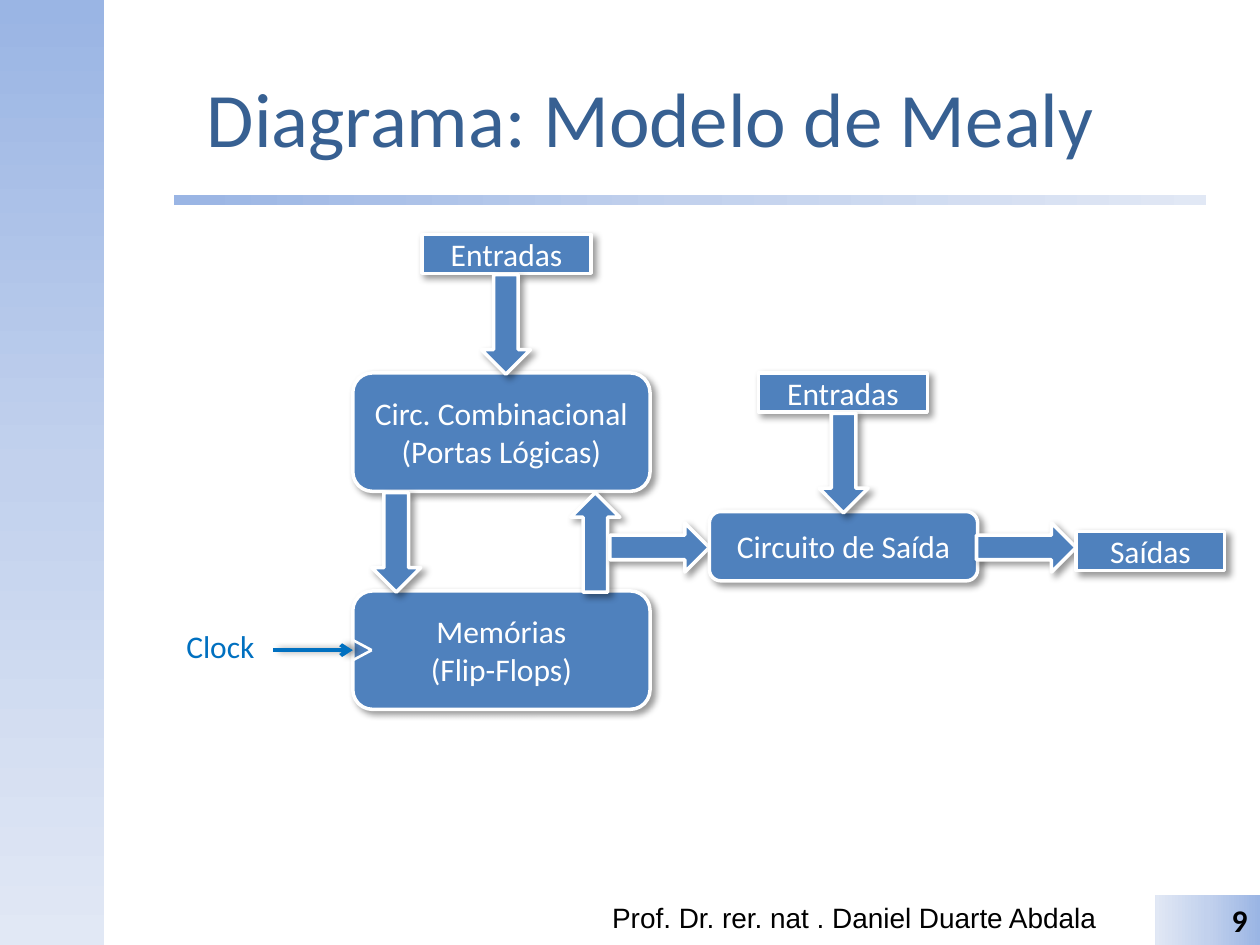
"""Builds the slide with the block diagram of the Mealy model."""
import copy

import pptx
import pptx.dml.color
import pptx.enum.shapes
import pptx.enum.text
import pptx.oxml
import pptx.oxml.ns
import pptx.util
from pptx.util import Inches

COLORS = {
    "title": "376092", "block": "4F81BD", "white": "FFFFFF", "black": "000000",
    "clock": "0070C0", "deep": "9AB5E4", "mid": "C2D1ED", "pale": "E1E8F5",
}
RGB = {name: pptx.dml.color.RGBColor.from_string(value) for name, value in COLORS.items()}
FORM = pptx.enum.shapes.MSO_SHAPE
ALIGN = pptx.enum.text.PP_ALIGN
ANCHOR = pptx.enum.text.MSO_ANCHOR
STRAIGHT = pptx.enum.shapes.MSO_CONNECTOR.STRAIGHT


def write(shape, lines, size, color, align=ALIGN.CENTER, anchor=ANCHOR.MIDDLE,
          font="Calibri", bold=False, wrap=True):
    frame = shape.text_frame
    frame.word_wrap = wrap
    frame.vertical_anchor = anchor
    for index, line in enumerate(lines):
        paragraph = frame.add_paragraph() if index else frame.paragraphs[0]
        paragraph.alignment = align
        run = paragraph.add_run()
        run.text = line
        run.font.name = font
        run.font.size = pptx.util.Pt(size)
        run.font.bold = bold
        run.font.color.rgb = RGB[color]


def add_effects(shape, angle=None):
    properties = shape._element.spPr
    effects = properties.find(pptx.oxml.ns.qn("a:effectLst"))
    if effects is None:
        effects = pptx.oxml.parse_xml(f'<a:effectLst {pptx.oxml.ns.nsdecls("a")}/>')
        properties.append(effects)
    if angle is not None:
        effects.append(pptx.oxml.parse_xml(
            f'<a:outerShdw {pptx.oxml.ns.nsdecls("a")} blurRad="50800" dist="38100" '
            f'dir="{angle * 60000}" algn="tl" rotWithShape="0">'
            f'<a:srgbClr val="{COLORS["black"]}"><a:alpha val="40000"/></a:srgbClr>'
            '</a:outerShdw>'))


presentation = pptx.Presentation()
presentation.slide_width = Inches(10)
presentation.slide_height = Inches(7.5)
slide = presentation.slides.add_slide(presentation.slide_layouts[6])
shapes = slide.shapes

bands = []
for form, box, angle in [
    (FORM.RECTANGLE, (0, 0, 0.83, 7.5), 270),
    (FORM.RECTANGLE, (1.38, 1.55, 8.19, 0.08), 0),
    (FORM.RECTANGLE, (9.17, 7.1, 0.83, 0.4), 180),
]:
    band = shapes.add_shape(form, *map(Inches, box))
    band.shadow.inherit = False
    band.line.fill.background()
    band.fill.gradient()
    band.fill.gradient_angle = angle
    stop_list = band._element.spPr.find(".//" + pptx.oxml.ns.qn("a:gsLst"))
    stop_list.insert(1, copy.deepcopy(stop_list[0]))
    for stop, color, position in zip(band.fill.gradient_stops, ("deep", "mid", "pale"), (0, 0.5, 1)):
        stop.color.rgb = RGB[color]
        stop.position = position
    bands.append(band)
write(bands[-1], ["9"], 18, "black", ALIGN.RIGHT, ANCHOR.TOP, bold=True)

title = shapes.add_textbox(Inches(0.83), Inches(0.3), Inches(8.67), Inches(1.25))
write(title, ["Diagrama: Modelo de Mealy"], 44, "title")
author = shapes.add_textbox(Inches(4.76), Inches(7.1), Inches(4.19), Inches(0.4))
write(author, ["Prof. Dr. rer. nat . Daniel Duarte Abdala"], 16, "black", ALIGN.LEFT, ANCHOR.TOP, "Arial")

blocks = {}
for name, form, box, lines in [
    ("logic", FORM.ROUNDED_RECTANGLE, (2.8, 2.96, 2.36, 0.94), ["Circ. Combinacional", "(Portas Lógicas)"]),
    ("memory", FORM.ROUNDED_RECTANGLE, (2.8, 4.69, 2.36, 0.94), ["Memórias", "(Flip-Flops)"]),
    ("logic to memory", FORM.DOWN_ARROW, (2.95, 3.91, 0.39, 0.79), []),
    ("logic inputs", FORM.RECTANGLE, (3.35, 1.86, 1.34, 0.31), ["Entradas"]),
    ("inputs to logic", FORM.DOWN_ARROW, (3.82, 2.18, 0.39, 0.79), []),
    ("memory to logic", FORM.UP_ARROW, (4.53, 3.91, 0.39, 0.79), []),
    ("memory to output", FORM.RIGHT_ARROW, (4.84, 4.15, 0.79, 0.39), []),
    ("output", FORM.ROUNDED_RECTANGLE, (5.63, 4.06, 2.13, 0.55), ["Circuito de Saída"]),
    ("output to results", FORM.RIGHT_ARROW, (7.75, 4.15, 0.79, 0.39), []),
    ("output inputs", FORM.RECTANGLE, (6.02, 2.96, 1.34, 0.31), ["Entradas"]),
    ("inputs to output", FORM.DOWN_ARROW, (6.5, 3.28, 0.39, 0.79), []),
    ("results", FORM.RECTANGLE, (8.54, 4.22, 1.18, 0.31), ["Saídas"]),
]:
    block = shapes.add_shape(form, *map(Inches, box))
    block.fill.solid()
    block.fill.fore_color.rgb = RGB["block"]
    block.line.color.rgb = RGB["white"]
    block.line.width = pptx.util.Pt(2)
    block.shadow.inherit = False
    add_effects(block, 45)
    write(block, lines, 18, "white")
    blocks[name] = block

for edge_y in (5.08, 5.24):
    clock_notch = shapes.add_connector(STRAIGHT, Inches(2.8), Inches(edge_y), Inches(2.95), Inches(5.16))
    clock_notch.line.color.rgb = RGB["white"]
    clock_notch.line.width = pptx.util.Pt(1.5)
    add_effects(clock_notch)

clock_signal = shapes.add_connector(STRAIGHT, Inches(2.17), Inches(5.16), Inches(2.8), Inches(5.16))
clock_signal.end_connect(blocks["memory"], 1)
clock_signal.line.color.rgb = RGB["clock"]
clock_signal.line.width = pptx.util.Pt(2.25)
clock_signal.line._get_or_add_ln().append(
    pptx.oxml.parse_xml(f'<a:tailEnd {pptx.oxml.ns.nsdecls("a")} type="arrow"/>'))
add_effects(clock_signal, 0)

clock_label = shapes.add_textbox(Inches(1.38), Inches(4.93), Inches(0.75), Inches(0.4))
write(clock_label, ["Clock"], 18, "clock", ALIGN.LEFT, ANCHOR.TOP, wrap=False)

presentation.save("out.pptx")
